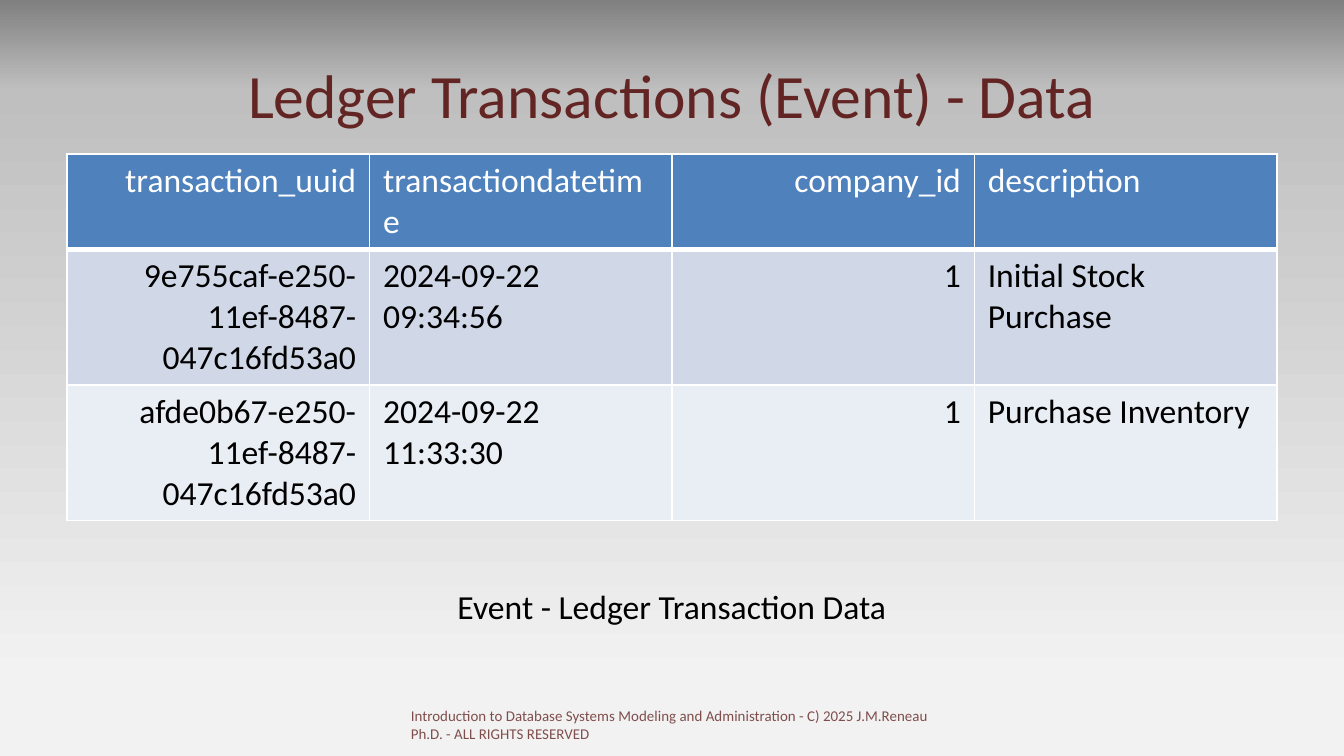
from copy import deepcopy
from dataclasses import dataclass

from lxml import etree
from pptx import Presentation
from pptx import util as u
from pptx.dml.color import RGBColor
from pptx.enum import text
from pptx.oxml.ns import qn

PX = 9525  # EMU in one px, 96 px to the inch


@dataclass(frozen=True)
class Theme:
    font: str = "Calibri"
    title_size: int = 33
    body_size: int = 18
    footer_size: int = 8
    maroon: str = "632523"
    black: str = "000000"
    white: str = "FFFFFF"
    header_fill: str = "4F81BD"
    band_fills: tuple = ("D0D8E8", "E9EDF4")
    background: tuple = ((0, "808080"), (0.12, "BFBFBF"), (0.9, "F2F2F2"))
    border: int = 1
    header_rule: int = 3


@dataclass(frozen=True)
class Label:
    words: str
    box: tuple
    size: int
    color: str
    align: text.PP_ALIGN = text.PP_ALIGN.LEFT
    anchor: text.MSO_ANCHOR = text.MSO_ANCHOR.TOP
    alpha: int = 100


T = Theme()
LEFT, CENTER, RIGHT = text.PP_ALIGN.LEFT, text.PP_ALIGN.CENTER, text.PP_ALIGN.RIGHT

LABELS = (
    Label("Ledger Transactions (Event) - Data", (48, 22, 864, 90),
          T.title_size, T.maroon, CENTER, text.MSO_ANCHOR.MIDDLE),
    Label("Event - Ledger Transaction Data", (48, 414, 864, 54),
          T.body_size, T.black, CENTER),
    Label("Introduction to Database Systems Modeling and Administration"
          " - C) 2025 J.M.Reneau Ph.D. - ALL RIGHTS RESERVED",
          (284, 500, 390, 29), T.footer_size, T.maroon, alpha=80),
)

TABLE_BOX = (48, 110, 864, 262)
ROW_HEIGHTS = (68, 97, 97)
COLUMN_ALIGNS = (RIGHT, LEFT, RIGHT, LEFT)
ROWS = (
    ("transaction_uuid", "transactiondatetime", "company_id", "description"),
    ("9e755caf-e250-11ef-8487-047c16fd53a0", "2024-09-22 09:34:56", "1",
     "Initial Stock Purchase"),
    ("afde0b67-e250-11ef-8487-047c16fd53a0", "2024-09-22 11:33:30", "1",
     "Purchase Inventory"),
)


def emu(box: tuple) -> list:
    return [u.Emu(v * PX) for v in box]


def rgb(color: str) -> RGBColor:
    return RGBColor.from_string(color)


def add_run(p, words: str, size: int, color: str, align, alpha: int = 100) -> None:
    p.alignment = align
    r = p.add_run()
    r.text = words
    r.font.name = T.font
    r.font.size = u.Pt(size)
    r.font.color.rgb = rgb(color)
    if alpha < 100:
        clr = r.font.fill._xPr.find(qn("a:solidFill"))[0]
        etree.SubElement(clr, qn("a:alpha"), val=str(alpha * 1000))


def add_label(s, label: Label) -> None:
    tf = s.shapes.add_textbox(*emu(label.box)).text_frame
    tf.word_wrap = True
    tf.vertical_anchor = label.anchor
    add_run(tf.paragraphs[0], label.words, label.size, label.color,
            label.align, label.alpha)


def set_borders(cell, bottom: int) -> None:
    """Outline a cell; border elements must come before its fill."""
    tc_pr = cell._tc.get_or_add_tcPr()
    widths = {"L": T.border, "R": T.border, "T": T.border, "B": bottom}
    for i, (side, width) in enumerate(widths.items()):
        ln = etree.Element(qn(f"a:ln{side}"), w=str(u.Pt(width)))
        fill = etree.SubElement(ln, qn("a:solidFill"))
        etree.SubElement(fill, qn("a:srgbClr"), val=T.white)
        tc_pr.insert(i, ln)


def add_ledger_table(s) -> None:
    table = s.shapes.add_table(len(ROWS), len(COLUMN_ALIGNS), *emu(TABLE_BOX)).table
    table.first_row = table.horz_banding = False
    fills = (T.header_fill, *T.band_fills)
    for i, (row, height, fill) in enumerate(zip(ROWS, ROW_HEIGHTS, fills)):
        table.rows[i].height = u.Emu(height * PX)
        header = i == 0
        for j, (words, align) in enumerate(zip(row, COLUMN_ALIGNS)):
            cell = table.cell(i, j)
            cell.fill.solid()
            cell.fill.fore_color.rgb = rgb(fill)
            set_borders(cell, T.header_rule if header else T.border)
            add_run(cell.text_frame.paragraphs[0], words, T.body_size,
                    T.white if header else T.black, align)


def paint_background(s) -> None:
    fill = s.background.fill
    fill.gradient()
    fill.gradient_angle = 270
    stop_list = next(s._element.iter(qn("a:gsLst")))
    stop_list.append(deepcopy(stop_list[-1]))
    for stop, (position, color) in zip(fill.gradient_stops, T.background):
        stop.position = position
        stop.color.rgb = rgb(color)


def main() -> None:
    prs = Presentation()
    prs.slide_width, prs.slide_height = emu((960, 540))
    s = prs.slides.add_slide(prs.slide_layouts[6])
    paint_background(s)
    title, *notes = LABELS
    add_label(s, title)
    add_ledger_table(s)
    for label in notes:
        add_label(s, label)
    prs.save("out.pptx")


if __name__ == "__main__":
    main()
